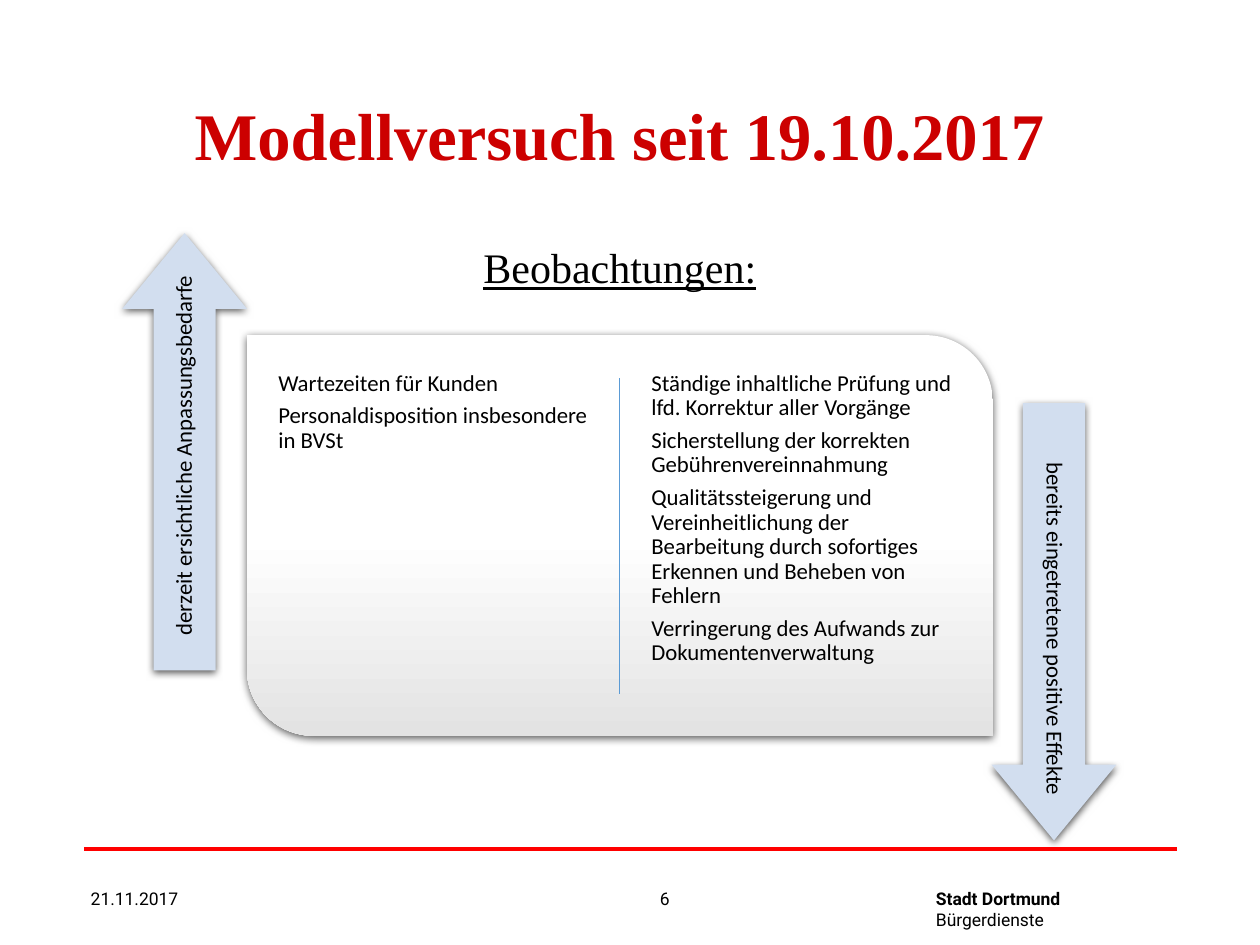
import pptx
import pptx.dml.color
import pptx.enum.shapes
import pptx.enum.text
import pptx.oxml
import pptx.oxml.ns
import pptx.util

RGB = pptx.dml.color.RGBColor
SHAPE = pptx.enum.shapes.MSO_SHAPE
ALIGN = pptx.enum.text.PP_ALIGN
ANCHOR = pptx.enum.text.MSO_ANCHOR

BLACK = RGB(0, 0, 0)
WHITE = RGB(255, 255, 255)
GREY = RGB(0xE3, 0xE3, 0xE3)
TITLE_RED = RGB(0xCC, 0, 0)
RULE_RED = RGB(0xFF, 0, 0)
DIVIDER_BLUE = RGB(0x5B, 0x9B, 0xD5)
ARROW_BLUE = RGB(0xD2, 0xDE, 0xEF)

SHADOW = (
    '<a:outerShdw %s blurRad="57150" dist="19050" dir="5400000" rotWithShape="0">'
    '<a:srgbClr val="000000"><a:alpha val="63000"/></a:srgbClr></a:outerShdw>'
    % pptx.oxml.ns.nsdecls("a")
)

NEEDS = ["Wartezeiten für Kunden", "Personaldisposition insbesondere in BVSt"]
EFFECTS = [
    "Ständige inhaltliche Prüfung und lfd. Korrektur aller Vorgänge",
    "Sicherstellung der korrekten Gebührenvereinnahmung",
    "Qualitätssteigerung und Vereinheitlichung der Bearbeitung durch sofortiges "
    "Erkennen und Beheben von Fehlern",
    "Verringerung des Aufwands zur Dokumentenverwaltung",
]


class SlideBuilder:
    """Draws styled elements on a slide measured in 100 columns by 75 rows."""

    def __init__(self, prs):
        self.unit = prs.slide_width / 100
        self.slide = prs.slides.add_slide(prs.slide_layouts[5])

    def grid(self, *lengths):
        return [pptx.util.Emu(round(n * self.unit)) for n in lengths]

    def fill_text(self, sp, lines, font, size, color=BLACK, align=ALIGN.LEFT,
                  anchor=ANCHOR.TOP, inset=1, bold=(), underline=None, body=False):
        tf = sp.text_frame
        tf.word_wrap = True
        tf.auto_size = pptx.enum.text.MSO_AUTO_SIZE.NONE
        tf.vertical_anchor = anchor
        tf.margin_left, tf.margin_right, tf.margin_top, tf.margin_bottom = self.grid(
            inset, inset, 0.5, 0.5)
        for i, line in enumerate(lines):
            p = tf.add_paragraph() if i else tf.paragraphs[0]
            p.alignment = align
            if body:
                p.line_spacing = 0.9
                p.space_after = pptx.util.Pt(4.5)
            r = p.add_run()
            r.text = line
            r.font.name, r.font.size = font, pptx.util.Pt(size)
            r.font.bold, r.font.underline = i in bold, underline
            r.font.color.rgb = color

    def title(self, box, text):
        sp = self.slide.shapes.title
        sp.left, sp.top, sp.width, sp.height = self.grid(*box)
        self.fill_text(sp, [text], "Times New Roman", 38, TITLE_RED, ALIGN.CENTER,
                       ANCHOR.MIDDLE, bold=(0,))

    def text(self, box, lines, font, size, rotation=0, **style):
        sp = self.slide.shapes.add_textbox(*self.grid(*box))
        sp.rotation = rotation
        self.fill_text(sp, lines, font, size, **style)

    def body(self, box, lines, **style):
        self.text(box, lines, "Calibri", 13, inset=0.5, body=True, **style)

    def footer(self, box, lines, **style):
        self.text(box, lines, "Roboto", 10, **style)

    def line(self, start, end, color, width):
        cn = self.slide.shapes.add_connector(
            pptx.enum.shapes.MSO_CONNECTOR.STRAIGHT, *self.grid(*start, *end))
        cn.line.color.rgb = color
        cn.line.width = pptx.util.Pt(width)
        cn.element.spPr.append(
            pptx.oxml.parse_xml("<a:effectLst %s/>" % pptx.oxml.ns.nsdecls("a")))

    def shape(self, kind, box, adjustments):
        sp = self.slide.shapes.add_shape(kind, *self.grid(*box))
        for i, value in enumerate(adjustments):
            sp.adjustments[i] = value
        sp.line.fill.background()
        sp.shadow.inherit = False
        effects = sp.element.spPr.find(pptx.oxml.ns.qn("a:effectLst"))
        effects.append(pptx.oxml.parse_xml(SHADOW))
        return sp

    def panel(self, box):
        sp = self.shape(SHAPE.ROUND_2_DIAG_RECTANGLE, box, (0, 0.167))
        sp.fill.gradient()
        sp.fill.gradient_angle = 270
        for stop, position, color in zip(sp.fill.gradient_stops, (0.5, 1), (WHITE, GREY)):
            stop.position, stop.color.rgb = position, color

    def arrow(self, box, label_box, label, rotation):
        sp = self.shape(SHAPE.RIGHT_ARROW, box, (0.498, 0.607))
        sp.fill.solid()
        sp.fill.fore_color.rgb = ARROW_BLUE
        sp.rotation = rotation
        self.body(label_box, [label], rotation=rotation, align=ALIGN.RIGHT,
                  anchor=ANCHOR.MIDDLE)


def main():
    prs = pptx.Presentation()
    prs.slide_width, prs.slide_height = pptx.util.Inches(10), pptx.util.Inches(7.5)
    s = SlideBuilder(prs)

    s.title((6.7, 4.4, 85, 12.5), "Modellversuch seit 19.10.2017")
    s.text((37.2, 18.7, 24, 5), ["Beobachtungen:"], "Times New Roman", 24,
           align=ALIGN.CENTER, underline=True)

    s.panel((19.6, 26.6, 59.2, 31.8))
    s.line((49.2, 30), (49.2, 55.1), DIVIDER_BLUE, 0.5)
    for column, lines in ((21.6, NEEDS), (51.2, EFFECTS)):
        s.body((column, 29, 25.6, 27), lines)

    s.arrow((-2.7, 30.9, 34.7, 9.9), (-1.2, 34.8, 31.7, 4.9),
            "derzeit ersichtliche Anpassungsbedarfe", 270)
    s.arrow((66.3, 44.4, 34.7, 9.9), (67.8, 45.3, 31.7, 4.9),
            "bereits eingetretene positive Effekte", 90)

    s.line((6.7, 67.4), (93.4, 67.4), RULE_RED, 2)
    s.footer((6.7, 70, 20.8, 5), ["21.11.2017"], inset=0.5)
    s.footer((46.9, 70, 11.7, 5), ["6"], align=ALIGN.CENTER)
    s.footer((73.3, 70, 12.5, 5), ["Stadt Dortmund", "Bürgerdienste"], bold=(0,))
    prs.save("out.pptx")


if __name__ == "__main__":
    main()
